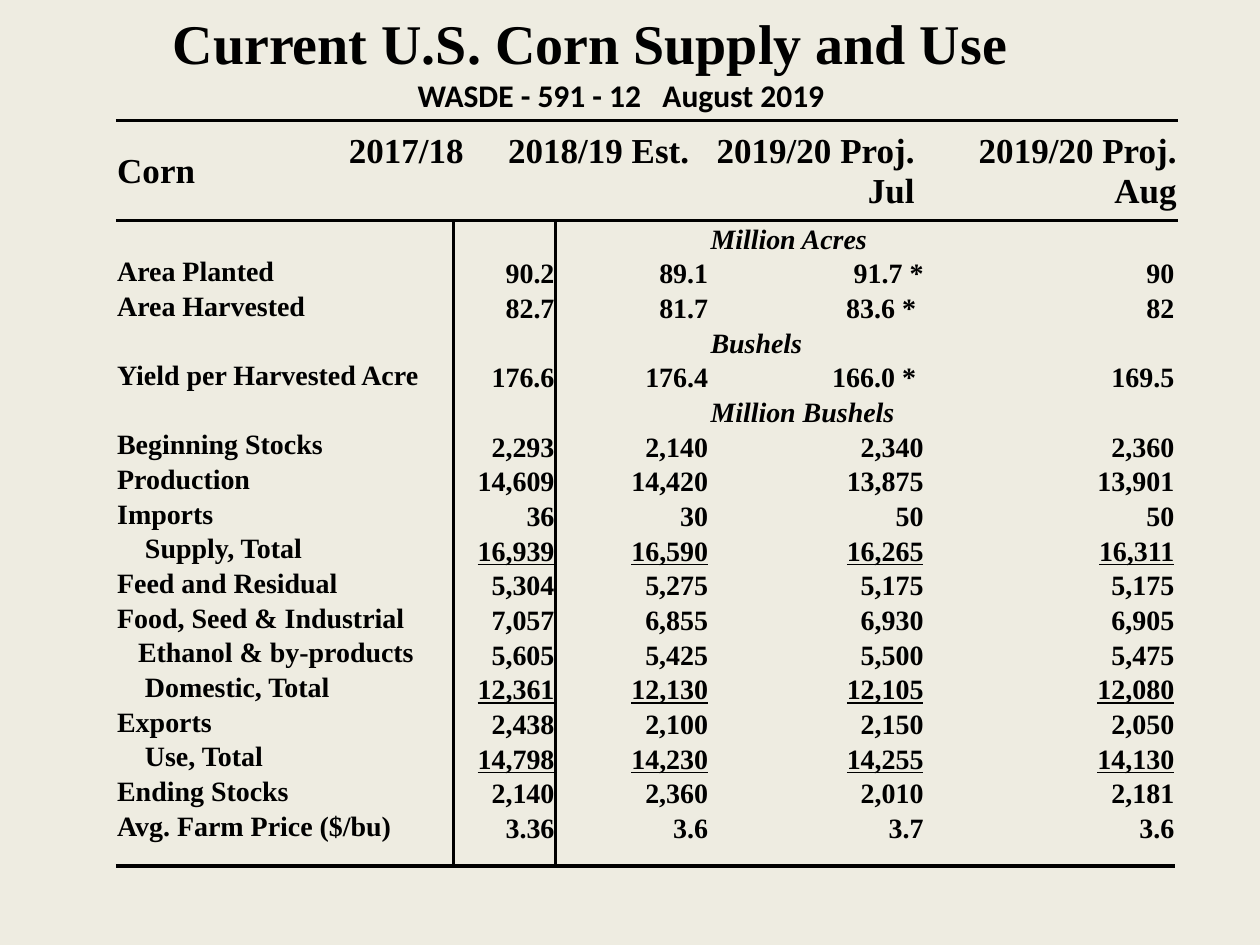
from lxml import etree
from pptx import Presentation
from pptx.dml.color import RGBColor
from pptx.enum.text import MSO_ANCHOR, MSO_AUTO_SIZE, PP_ALIGN
from pptx.oxml.ns import qn
from pptx.util import Inches, Pt

TOP, MIDDLE, BOTTOM = MSO_ANCHOR.TOP, MSO_ANCHOR.MIDDLE, MSO_ANCHOR.BOTTOM
LEFT, CENTER, RIGHT = PP_ALIGN.LEFT, PP_ALIGN.CENTER, PP_ALIGN.RIGHT
FIXED = MSO_AUTO_SIZE.NONE
PLAIN = "{2D5ABB26-0587-4C30-8999-92F81FD0307C}"  # no style, no grid

THEME = {
    "back": RGBColor.from_string("EEECE1"),
    "ink": "000000",
    "serif": "Times New Roman",
    "sans": "Calibri",
    "title": 32, "sub": 18, "head": 20, "body": 16, "blank": 8,
    "rule": 2,
}
PAD = 0.01
SPACE = 0.06  # width of one space at body size, in inches

# label, indent in spaces, four values, underlined or not
UNITS = {0: "Million Acres", 3: "Bushels", 5: "Million Bushels"}
ITEMS = [
    ("Area Planted", 0, "90.2", "89.1", "91.7 *", "90"),
    ("Area Harvested", 0, "82.7", "81.7", "83.6 *", "82"),
    ("Yield per Harvested Acre", 0, "176.6", "176.4", "166.0 *", "169.5"),
    ("Beginning Stocks", 0, "2,293", "2,140", "2,340", "2,360"),
    ("Production", 0, "14,609", "14,420", "13,875", "13,901"),
    ("Imports", 0, "36", "30", "50", "50"),
    ("Supply, Total", 4, "16,939", "16,590", "16,265", "16,311"),
    ("Feed and Residual", 0, "5,304", "5,275", "5,175", "5,175"),
    ("Food, Seed & Industrial", 0, "7,057", "6,855", "6,930", "6,905"),
    ("Ethanol & by-products", 3, "5,605", "5,425", "5,500", "5,475"),
    ("Domestic, Total", 4, "12,361", "12,130", "12,105", "12,080"),
    ("Exports", 0, "2,438", "2,100", "2,150", "2,050"),
    ("Use, Total", 4, "14,798", "14,230", "14,255", "14,130"),
    ("Ending Stocks", 0, "2,140", "2,360", "2,010", "2,181"),
    ("Avg. Farm Price ($/bu)", 0, "3.36", "3.6", "3.7", "3.6"),
]
HEADS = [("Corn", "2017/18", "2018/19 Est.", "2019/20 Proj.", "2019/20 Proj."),
         ("", "", "", "Jul", "Aug")]


def add_grid(top, cols, rows):
    """Add an unstyled table whose columns and rows have the given inches."""
    frame = slide.shapes.add_table(
        len(rows), len(cols), Inches(0.92), Inches(top),
        Inches(sum(cols)), Inches(sum(rows)))
    grid = frame.table
    grid.first_row = grid.horz_banding = False
    grid._tbl.tblPr.find(qn("a:tableStyleId")).text = PLAIN
    for col, width in zip(grid.columns, cols):
        col.width = Inches(width)
    for row, height in zip(grid.rows, rows):
        row.height = Inches(height)
    return grid


def fill_cell(cell, text, size, sides="", align=LEFT, anchor=TOP,
              left=PAD, right=PAD, **style):
    """Write one cell; sides lists its ruled edges in the order L, R, T, B."""
    for side in sides:
        line = etree.SubElement(cell._tc.get_or_add_tcPr(), qn("a:ln" + side),
                                w=str(Pt(THEME["rule"])))
        paint = etree.SubElement(line, qn("a:solidFill"))
        etree.SubElement(paint, qn("a:srgbClr"), val=THEME["ink"])
    cell.fill.background()
    form = {"margin_left": Inches(left), "margin_right": Inches(right),
            "margin_top": Inches(PAD), "margin_bottom": 0,
            "vertical_anchor": anchor}
    for name, value in form.items():
        setattr(cell, name, value)
    para = cell.text_frame.paragraphs[0]
    para.alignment = align
    if not text:
        para._p.get_or_add_endParaRPr().set("sz", str(THEME["blank"] * 100))
        return
    run = para.add_run()
    run.text = text
    run.font.color.rgb = RGBColor.from_string(THEME["ink"])
    look = {"name": THEME["serif"], "size": Pt(size), "bold": True, **style}
    for name, value in look.items():
        setattr(run.font, name, value)


deck = Presentation()
deck.slide_width, deck.slide_height = Inches(10), Inches(7.5)
slide = deck.slides.add_slide(deck.slide_layouts[5])
slide.background.fill.solid()
slide.background.fill.fore_color.rgb = THEME["back"]

# Title and subtitle
title = slide.shapes.title
title.left, title.top, title.width, title.height = map(
    Inches, (1.21, 0.02, 7.5, 0.94))
frame = title.text_frame
frame.text = "Current U.S. Corn Supply and Use\nWASDE - 591 - 12   August 2019"
form = {"auto_size": FIXED, "word_wrap": True, "vertical_anchor": TOP,
        "margin_left": Inches(0.16), "margin_right": Inches(0.22),
        "margin_top": Inches(0.05), "margin_bottom": Inches(0.05)}
for name, value in form.items():
    setattr(frame, name, value)
looks = [(LEFT, "serif", "title"), (CENTER, "sans", "sub")]
for para, (align, face, size) in zip(frame.paragraphs, looks):
    para.alignment = align
    font = para.runs[0].font
    font.name, font.size, font.bold = THEME[face], Pt(THEME[size]), True
    font.color.rgb = RGBColor.from_string(THEME["ink"])

# Column heads
head = add_grid(0.96, (1.49, 1.28, 1.79, 1.79, 2.08), (0.4, 0.39))
head.cell(0, 0).merge(head.cell(1, 0))
for r, texts in enumerate(HEADS):
    for c, text in enumerate(texts):
        first = c == 0
        fill_cell(head.cell(r, c), text, THEME["head"],
                  "TB" if first else "TB"[r],
                  LEFT if first else RIGHT,
                  MIDDLE if first else (BOTTOM, TOP)[r])

# Body: unit lines between the items, and a thin blank row at the foot
count = len(ITEMS) + len(UNITS)
foot = 0.17
pitch = (5.13 - foot) / count
body = add_grid(1.75, (2.68, 0.81, 1.22, 1.71, 1.99), [pitch] * count + [foot])
items = iter(ITEMS)
for r in range(count + 1):
    unit, last = UNITS.get(r), r == count
    if unit or last:
        label, indent, *values = "", 0, "", "", unit, ""
    else:
        label, indent, *values = next(items)
    edge = "B" if last else ""
    fill_cell(body.cell(r, 0), label, THEME["body"], "R" + edge,
              left=PAD + indent * SPACE * 0.92)
    for c, text in enumerate(values, 1):
        starred = bool(text) and text.endswith("*") and r > 1
        fill_cell(body.cell(r, c), text, THEME["body"],
                  ("L" if c == 1 else "") + edge,
                  LEFT if unit else RIGHT, BOTTOM,
                  right=PAD + SPACE * starred,
                  italic=bool(unit), underline=label.endswith("Total"))

deck.save("out.pptx")
